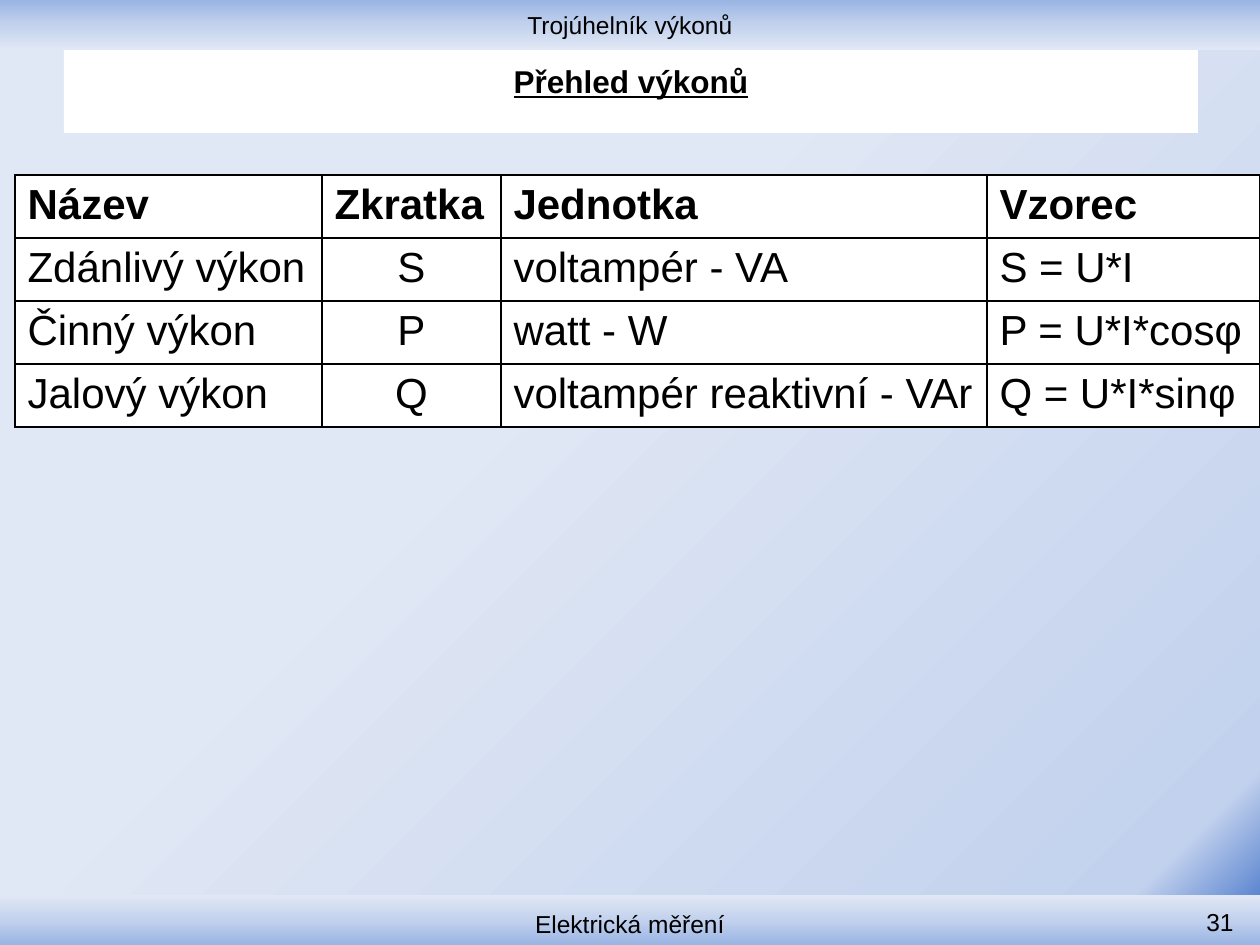
from dataclasses import dataclass

from lxml import etree
from pptx import Presentation
from pptx import util as u
from pptx.dml.color import RGBColor
from pptx.enum import shapes, text
from pptx.oxml.ns import qn

EMU_PER_PX = 914400 / 126
FONT = "Arial"
COLORS = {
    "ink": "000000",
    "paper": "FFFFFF",
    "deep": "3468C5",
    "bar": "9AB5E4",
    "mid": "C2D1ED",
    "pale": "E1E8F5",
}
PAGE_STOPS = [(0, "deep"), (8, "mid"), (60, "pale")]
BAR_STOPS = [(0, "bar"), (50, "mid"), (100, "pale")]


@dataclass(frozen=True)
class Bar:
    label: str
    top: int
    height: int
    angle: int
    anchor: text.MSO_ANCHOR


BARS = [
    Bar("Trojúhelník výkonů", 0, 50, 90, text.MSO_ANCHOR.MIDDLE),
    Bar("Elektrická měření", 895, 50, 270, text.MSO_ANCHOR.BOTTOM),
]

COLUMN_WIDTHS = [307, 179, 486, 273]
ROW_HEIGHT = 59
CENTERED_COLUMN = 1
ROWS = [
    ("Název", "Zkratka", "Jednotka", "Vzorec"),
    ("Zdánlivý výkon", "S", "voltampér - VA", "S = U*I"),
    ("Činný výkon", "P", "watt - W", "P = U*I*cosφ"),
    ("Jalový výkon", "Q", "voltampér reaktivní - VAr", "Q = U*I*sinφ"),
]


def px(length: int) -> u.Emu:
    return u.Emu(round(length * EMU_PER_PX))


def rgb(name: str) -> RGBColor:
    return RGBColor.from_string(COLORS[name])


def paint_gradient(fill, element, stops: list, angle: int) -> None:
    """Fill with colour stops; the angle runs clockwise in degrees."""
    fill.gradient()
    gradient = element.find(".//" + qn("a:gradFill"))
    stop_list = gradient.find(qn("a:gsLst"))
    for stop in list(stop_list):
        stop_list.remove(stop)
    for position, color in stops:
        stop = etree.SubElement(stop_list, qn("a:gs"), pos=str(position * 1000))
        etree.SubElement(stop, qn("a:srgbClr"), val=COLORS[color])
    gradient.find(qn("a:lin")).set("ang", str(angle * 60000))


def write(frame, words: str, size: int, align, bold: bool = False,
          underline: bool = False) -> None:
    frame.text = words
    para = frame.paragraphs[0]
    para.alignment = align
    for span in para.runs:
        span.font.name = FONT
        span.font.size = u.Pt(size)
        span.font.bold = bold
        span.font.underline = underline
        span.font.color.rgb = rgb("ink")


def draw_bar(page, bar: Bar) -> None:
    box = page.shapes.add_shape(shapes.MSO_SHAPE.RECTANGLE, 0, px(bar.top),
                                px(1260), px(bar.height))
    box.shadow.inherit = False
    box.line.fill.background()
    paint_gradient(box.fill, box.element, BAR_STOPS, bar.angle)
    box.text_frame.vertical_anchor = bar.anchor
    write(box.text_frame, bar.label, 14, text.PP_ALIGN.CENTER)


def add_borders(cell) -> None:
    properties = cell._tc.get_or_add_tcPr()
    for index, side in enumerate(("a:lnL", "a:lnR", "a:lnT", "a:lnB")):
        line = etree.Element(qn(side), w=str(u.Pt(1)))
        solid = etree.SubElement(line, qn("a:solidFill"))
        etree.SubElement(solid, qn("a:srgbClr"), val=COLORS["ink"])
        properties.insert(index, line)


def draw_table(page, left: int, top: int) -> None:
    table = page.shapes.add_table(
        len(ROWS), len(COLUMN_WIDTHS), px(left), px(top),
        px(sum(COLUMN_WIDTHS)), px(ROW_HEIGHT * len(ROWS))).table
    table.horz_banding = False
    for column, width in zip(table.columns, COLUMN_WIDTHS):
        column.width = px(width)
    for row_index, row in enumerate(ROWS):
        table.rows[row_index].height = px(ROW_HEIGHT)
        for column_index, words in enumerate(row):
            cell = table.cell(row_index, column_index)
            cell.fill.solid()
            cell.fill.fore_color.rgb = rgb("paper")
            add_borders(cell)
            centered = row_index > 0 and column_index == CENTERED_COLUMN
            align = text.PP_ALIGN.CENTER if centered else text.PP_ALIGN.LEFT
            write(cell.text_frame, words, 24, align, bold=row_index == 0)


def main() -> None:
    deck = Presentation()
    deck.slide_width, deck.slide_height = px(1260), px(945)
    page = deck.slides.add_slide(deck.slide_layouts[5])

    # Background, dark in the bottom right corner
    paint_gradient(page.background.fill, page.element, PAGE_STOPS, 225)

    # Header and footer bars
    for bar in BARS:
        draw_bar(page, bar)

    # Page number
    number = page.shapes.add_textbox(px(1176), px(893), px(70), px(50))
    number.text_frame.word_wrap = True
    number.text_frame.vertical_anchor = text.MSO_ANCHOR.BOTTOM
    write(number.text_frame, "31", 14, text.PP_ALIGN.RIGHT)

    # Title
    title = page.shapes.title
    title.left, title.top, title.width, title.height = map(px, (64, 55, 1134, 51))
    title.fill.solid()
    title.fill.fore_color.rgb = rgb("paper")
    title.text_frame.vertical_anchor = text.MSO_ANCHOR.MIDDLE
    title.text_frame.auto_size = text.MSO_AUTO_SIZE.SHAPE_TO_FIT_TEXT
    write(title.text_frame, "Přehled výkonů", 18, text.PP_ALIGN.CENTER,
          bold=True, underline=True)

    # Overview of powers
    draw_table(page, 15, 175)

    deck.save("out.pptx")


if __name__ == "__main__":
    main()
